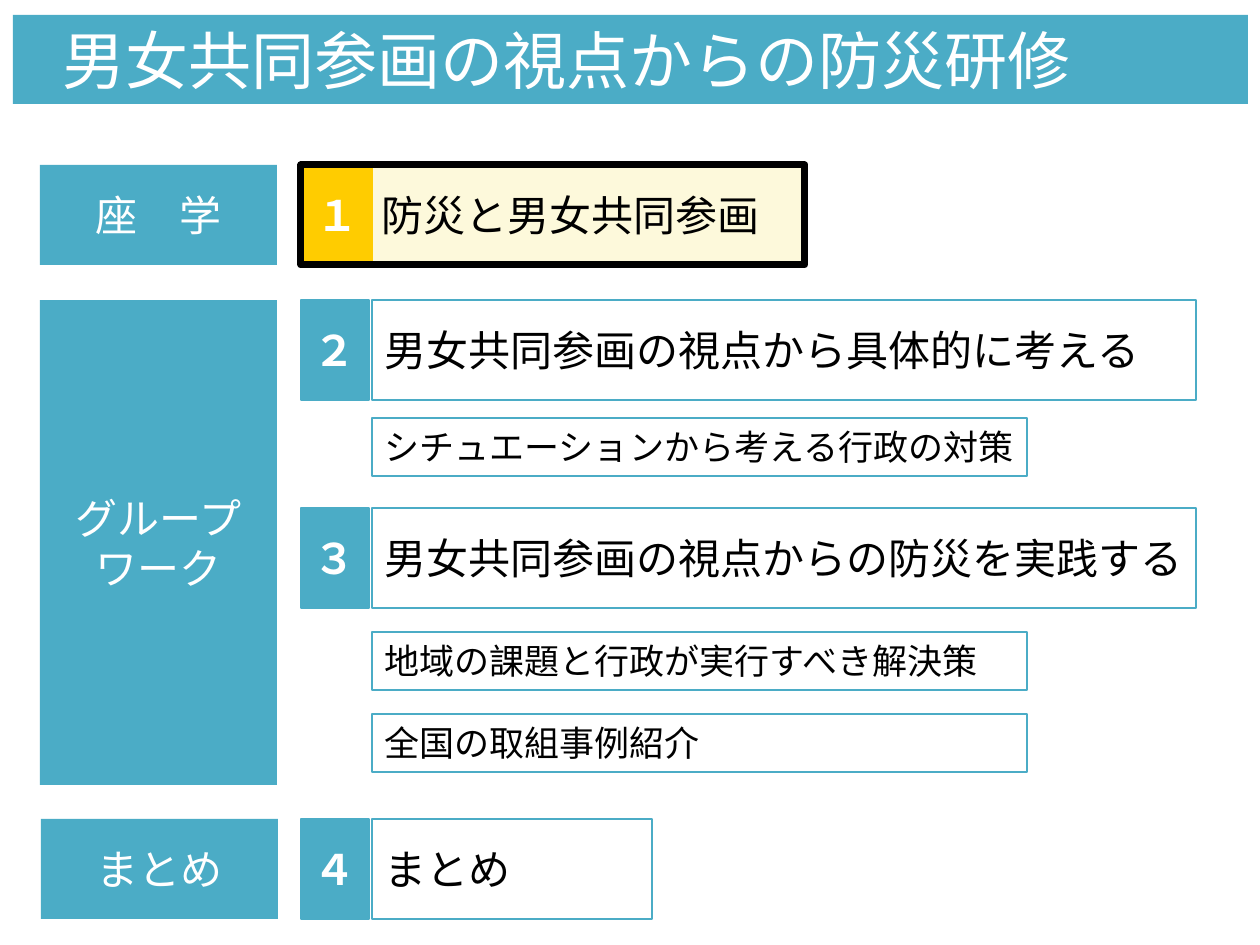
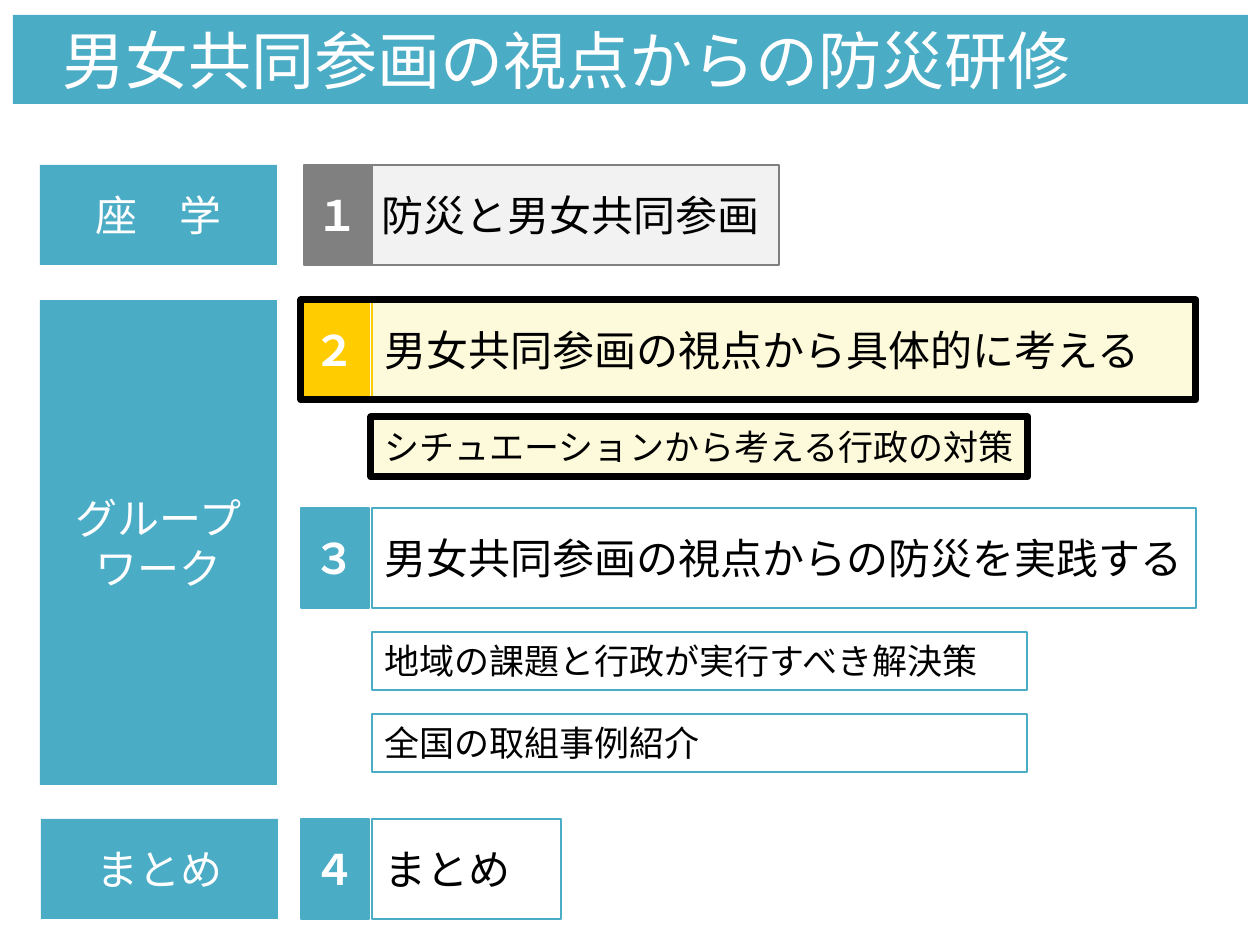
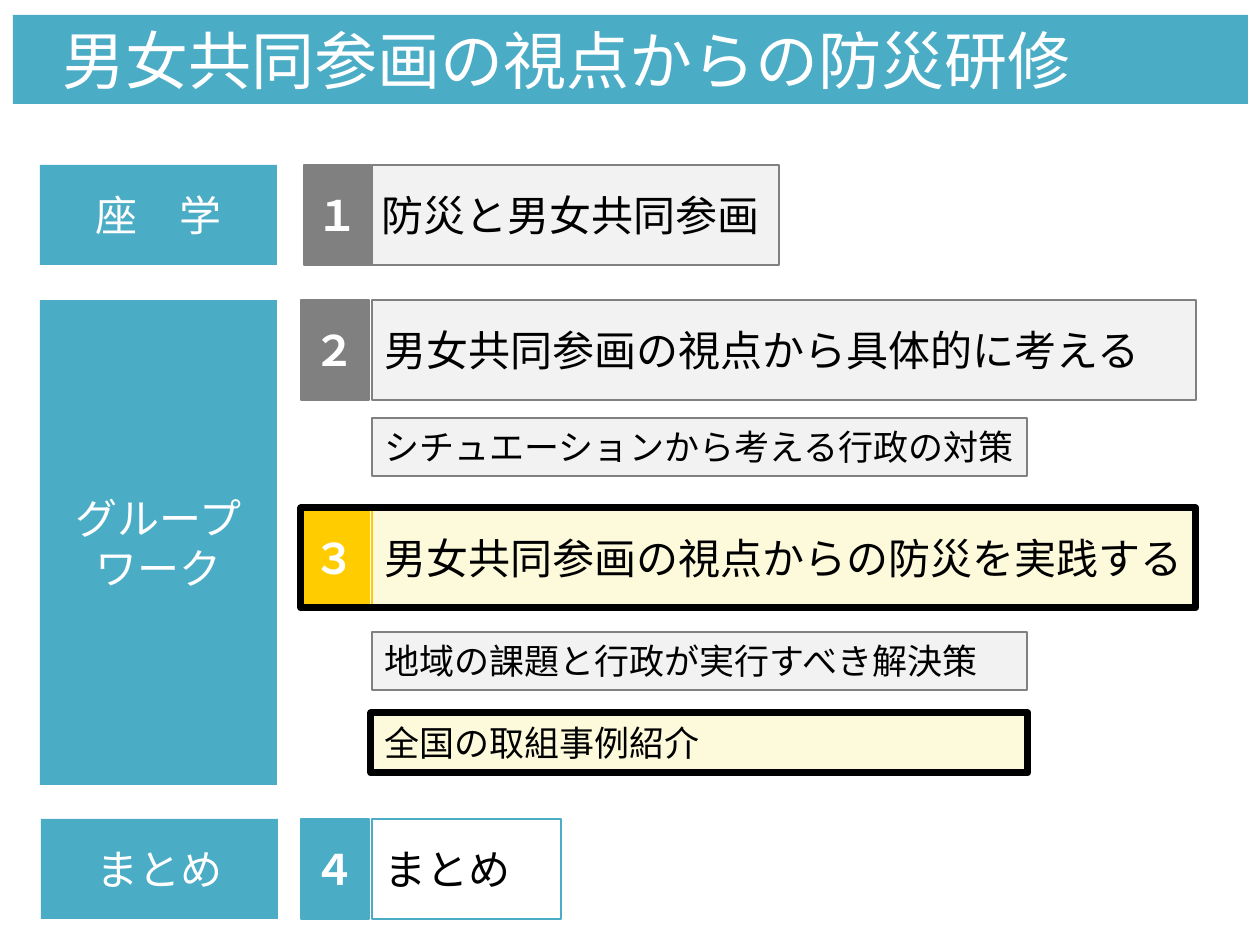
from dataclasses import dataclass

from pptx import Presentation
from pptx.dml.color import RGBColor
from pptx.enum.shapes import MSO_SHAPE as Shape
from pptx.enum.text import MSO_ANCHOR as Anchor, MSO_AUTO_SIZE as AutoSize, PP_ALIGN as Align
from pptx.util import Emu, Pt

PX = 914400 // 126
TITLE_ONLY = 5


@dataclass(frozen=True)
class Theme:
    teal: str = "4BACC6"
    gold: str = "FFCC00"
    cream: str = "FDF9DB"
    gray: str = "808080"
    pale: str = "F2F2F2"
    black: str = "000000"
    white: str = "FFFFFF"
    title_font: str = "Arial"
    body_font: str = "Calibri"
    title_size: int = 36
    item_size: int = 24
    sub_size: int = 20
    hairline: float = 0.75
    frame_line: int = 4


THEME = Theme()

# state: (strong colour of number and outline, fill of the label)
STATES = {
    "planned": (THEME.teal, None),
    "current": (THEME.gold, THEME.cream),
    "done": (THEME.gray, THEME.pale),
}

TITLE = "男女共同参画の視点からの防災研修"
BAND = (13, 15, 1235, 89)
NUMBER_X, LABEL_X = 301, 372
NUMBER_WIDTH, ITEM_HEIGHT = 68, 100
SUB_WIDTH, SUB_HEIGHT = 655, 58

CATEGORIES = [
    ("座　学", (40, 165, 237, 100)),
    ("グループ\nワーク", (40, 300, 237, 485)),
    ("まとめ", (41, 819, 237, 100)),
]
# key: (text, top, label width, shift of number, shift of label)
ITEMS = {
    "１": ("防災と男女共同参画", 165, 410, 3, -3),
    "２": ("男女共同参画の視点から具体的に考える", 300, 824, 0, 0),
    "３": ("男女共同参画の視点からの防災を実践する", 508, 824, 0, 0),
    "４": ("まとめ", 819, 189, 0, 0),
}
SUBITEMS = {
    "situations": ("シチュエーションから考える行政の対策", 418),
    "solutions": ("地域の課題と行政が実行すべき解決策", 632),
    "examples": ("全国の取組事例紹介", 714),
}
AGENDAS = [
    {"current": {"１"}, "done": set(), "widths": {"１": 436, "４": 280}},
    {"current": {"２", "situations"}, "done": {"１"}, "widths": {}},
    {"current": {"３", "examples"}, "done": {"１", "２", "situations", "solutions"}, "widths": {}},
]


def write(shape, text, *, size=THEME.item_size, font=THEME.body_font, color=THEME.black,
          bold=False, align=Align.LEFT, wrap=True):
    frame = shape.text_frame
    frame.text = text
    frame.word_wrap = wrap
    frame.auto_size = AutoSize.NONE
    frame.vertical_anchor = Anchor.MIDDLE
    for para in frame.paragraphs:
        para.alignment = align
        for span in para.runs:
            span.font.size = Pt(size)
            span.font.name = font
            span.font.bold = bold
            span.font.color.rgb = RGBColor.from_string(color)


def place(shape, box):
    shape.left, shape.top, shape.width, shape.height = (Emu(length * PX) for length in box)


def add_box(page, box, *, fill=None, line=None, weight=THEME.hairline):
    shape = page.shapes.add_shape(Shape.RECTANGLE, 0, 0, 0, 0)
    place(shape, box)
    shape.shadow.inherit = False
    if fill:
        shape.fill.solid()
        shape.fill.fore_color.rgb = RGBColor.from_string(fill)
    else:
        shape.fill.background()
    if line:
        shape.line.color.rgb = RGBColor.from_string(line)
        shape.line.width = Pt(weight)
    else:
        shape.line.fill.background()
    return shape


def add_title(page, box):
    title = page.shapes.title
    place(title, box)
    title.fill.solid()
    title.fill.fore_color.rgb = RGBColor.from_string(THEME.teal)
    write(title, TITLE, size=THEME.title_size, font=THEME.title_font, color=THEME.white)
    title.text_frame.margin_left = Emu(49 * PX)


def add_category(page, text, box):
    write(add_box(page, box, fill=THEME.teal), text, color=THEME.white,
          align=Align.CENTER, wrap=False)


def add_item(page, number, state, width):
    """Draw a numbered step and return the box that frames it."""
    text, top, _, number_shift, label_shift = ITEMS[number]
    strong, pale = STATES[state]
    label_x = LABEL_X + label_shift
    label = add_box(page, (label_x, top, width, ITEM_HEIGHT), fill=pale, line=strong)
    write(label, text)
    badge = add_box(page, (NUMBER_X + number_shift, top, NUMBER_WIDTH, ITEM_HEIGHT),
                    fill=strong, line=strong)
    write(badge, number, color=THEME.white, bold=True, wrap=False)
    return NUMBER_X, top, label_x + width - NUMBER_X, ITEM_HEIGHT


def add_subitem(page, key, state):
    """Draw a sub-step and return the box that frames it."""
    text, top = SUBITEMS[key]
    strong, pale = STATES[state]
    label = add_box(page, (LABEL_X, top, SUB_WIDTH, SUB_HEIGHT), fill=pale, line=strong)
    write(label, text, size=THEME.sub_size)
    return LABEL_X - 1, top - 1, SUB_WIDTH + 2, SUB_HEIGHT + 2


def add_agenda(deck, agenda):
    page = deck.slides.add_slide(deck.slide_layouts[TITLE_ONLY])
    add_title(page, BAND)
    for text, box in CATEGORIES:
        add_category(page, text, box)

    def state_of(key):
        return next((name for name in ("current", "done") if key in agenda[name]), "planned")

    frames = {}
    for number, item in ITEMS.items():
        width = agenda["widths"].get(number, item[2])
        frames[number] = add_item(page, number, state_of(number), width)
    for key in SUBITEMS:
        frames[key] = add_subitem(page, key, state_of(key))
    for key, box in frames.items():
        if key in agenda["current"]:
            add_box(page, box, line=THEME.black, weight=THEME.frame_line)


def main():
    deck = Presentation()
    deck.slide_width, deck.slide_height = Emu(1260 * PX), Emu(945 * PX)
    for agenda in AGENDAS:
        add_agenda(deck, agenda)
    deck.save("out.pptx")


if __name__ == "__main__":
    main()
